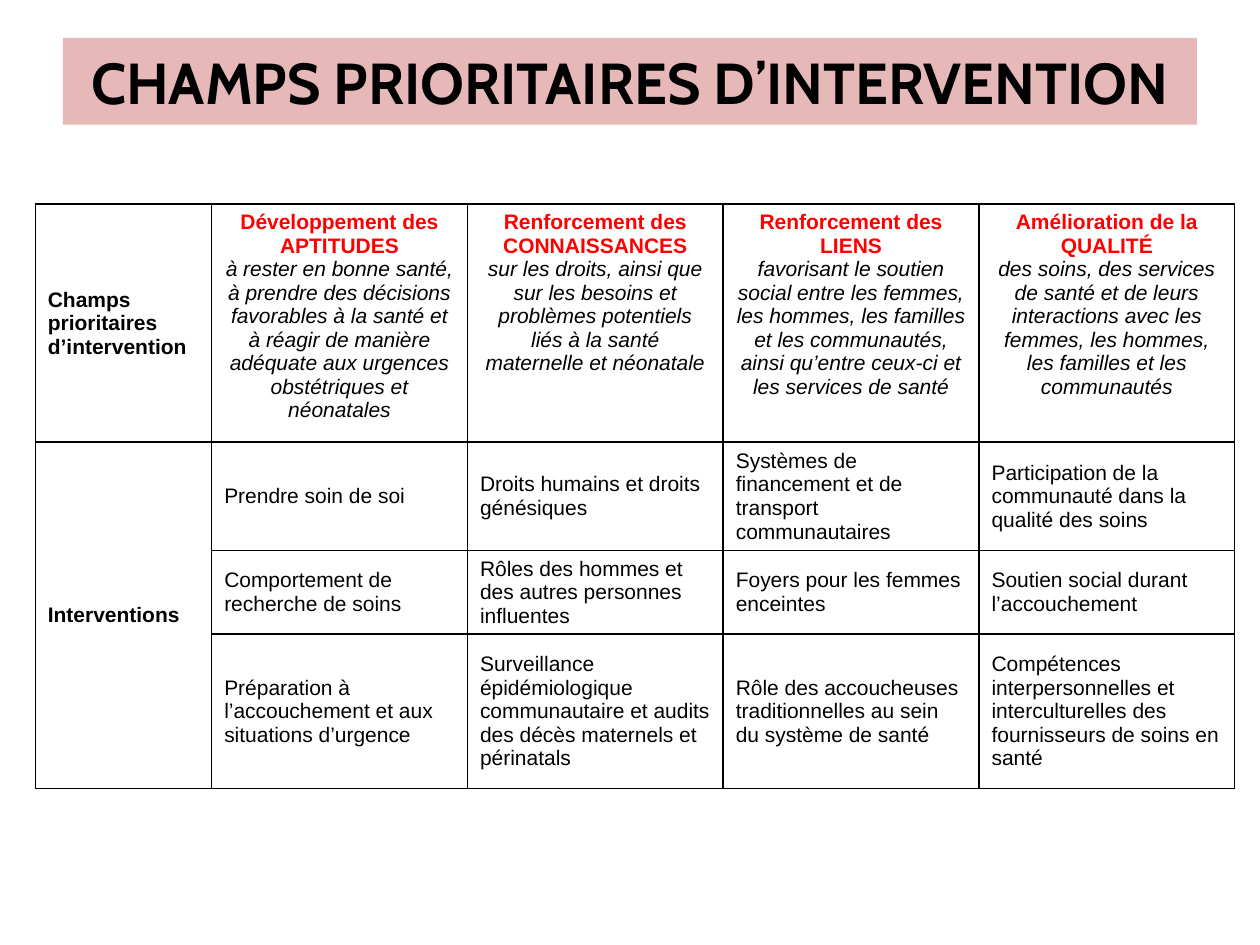
from pptx import Presentation
from pptx.dml.color import RGBColor
from pptx.enum.shapes import MSO_SHAPE
from pptx.enum.text import MSO_ANCHOR, PP_ALIGN
from pptx.util import Inches, Pt
from lxml.etree import SubElement
from pptx.oxml.ns import qn

BLACK = RGBColor(0, 0, 0)
RED = RGBColor(255, 0, 0)
PINK = RGBColor(0xE6, 0xB9, 0xB8)

COLS = [1.4] + [2.03] * 4
ROWS = [1.89, 0.86, 0.66, 1.23]
FIELDS = [
    (["Développement des APTITUDES"],
     "à rester en bonne santé, à prendre des décisions favorables à la santé "
     "et à réagir de manière adéquate aux urgences obstétriques et néonatales"),
    (["Renforcement des CONNAISSANCES"],
     "sur les droits, ainsi que sur les besoins et problèmes potentiels "
     "liés à la santé maternelle et néonatale"),
    (["Renforcement des", "LIENS"],
     "favorisant le soutien social entre les femmes, les hommes, les familles "
     "et les communautés, ainsi qu’entre ceux-ci et les services de santé"),
    (["Amélioration de la QUALITÉ"],
     "des soins, des services de santé et de leurs interactions avec les "
     "femmes, les hommes, les familles et les communautés"),
]
ACTIONS = [
    ["Prendre soin de soi",
     "Droits humains et droits génésiques",
     "Systèmes de financement et de transport communautaires",
     "Participation de la communauté dans la qualité des soins"],
    ["Comportement de recherche de soins",
     "Rôles des hommes et des autres personnes influentes",
     "Foyers pour les femmes enceintes",
     "Soutien social durant l’accouchement"],
    ["Préparation à l’accouchement et aux situations d’urgence",
     "Surveillance épidémiologique communautaire et audits des décès "
     "maternels et périnatals",
     "Rôle des accoucheuses traditionnelles au sein du système de santé",
     "Compétences interpersonnelles et interculturelles des fournisseurs "
     "de soins en santé"],
]


def write(frame, text, size=12, face="Arial", color=BLACK, bold=False,
          slant=False, align=PP_ALIGN.LEFT):
    para = frame.paragraphs[-1]
    if para.runs:
        para = frame.add_paragraph()
    para.alignment = align
    run = para.add_run()
    run.text = text
    font = run.font
    font.size, font.name = Pt(size), face
    font.bold, font.italic = bold, slant
    font.color.rgb = color


class Deck:
    def __init__(self, wide, high):
        self.show = Presentation()
        self.show.slide_width = Inches(wide)
        self.show.slide_height = Inches(high)
        self.slide = self.show.slides.add_slide(self.show.slide_layouts[6])
        self.edge = BLACK
        self.line = Pt(1)

    def banner(self, text, left, top, wide, high):
        box = self.slide.shapes.add_shape(
            MSO_SHAPE.RECTANGLE, *map(Inches, (left, top, wide, high)))
        box.shadow.inherit = False
        box.fill.solid()
        box.fill.fore_color.rgb = PINK
        box.line.fill.background()
        frame = box.text_frame
        frame.word_wrap = True
        frame.vertical_anchor = MSO_ANCHOR.MIDDLE
        write(frame, text, size=33, face="Cabin", bold=True,
              align=PP_ALIGN.CENTER)

    def border(self, cell):
        props = cell._tc.get_or_add_tcPr()
        for side in ("lnL", "lnR", "lnT", "lnB"):
            line = SubElement(props, qn("a:" + side), w=str(self.line))
            fill = SubElement(line, qn("a:solidFill"))
            SubElement(fill, qn("a:srgbClr"), val=str(self.edge))

    def table(self, left, top, cols, rows):
        grid = self.slide.shapes.add_table(
            len(rows), len(cols),
            *map(Inches, (left, top, sum(cols), sum(rows)))).table
        for col, wide in zip(grid.columns, cols):
            col.width = Inches(wide)
        for row, high in zip(grid.rows, rows):
            row.height = Inches(high)
        for cell in grid.iter_cells():
            self.border(cell)
            cell.fill.background()
            cell.vertical_anchor = MSO_ANCHOR.MIDDLE
        return grid

    def save(self):
        self.show.save("out.pptx")


def main():
    deck = Deck(10, 7.5)
    deck.banner("CHAMPS PRIORITAIRES D’INTERVENTION", 0.5, 0.3, 9, 0.69)
    grid = deck.table(0.28, 1.62, COLS, ROWS)
    grid.cell(1, 0).merge(grid.cell(3, 0))
    for row, label in enumerate(("Champs prioritaires d’intervention",
                                 "Interventions")):
        write(grid.cell(row, 0).text_frame, label, bold=True)
    for col, (heads, aim) in enumerate(FIELDS, 1):
        cell = grid.cell(0, col)
        cell.vertical_anchor = MSO_ANCHOR.TOP
        for head in heads:
            write(cell.text_frame, head, color=RED, bold=True,
                  align=PP_ALIGN.CENTER)
        write(cell.text_frame, aim, slant=True, align=PP_ALIGN.CENTER)
    for row, items in enumerate(ACTIONS, 1):
        for col, item in enumerate(items, 1):
            write(grid.cell(row, col).text_frame, item)
    deck.save()


if __name__ == "__main__":
    main()
